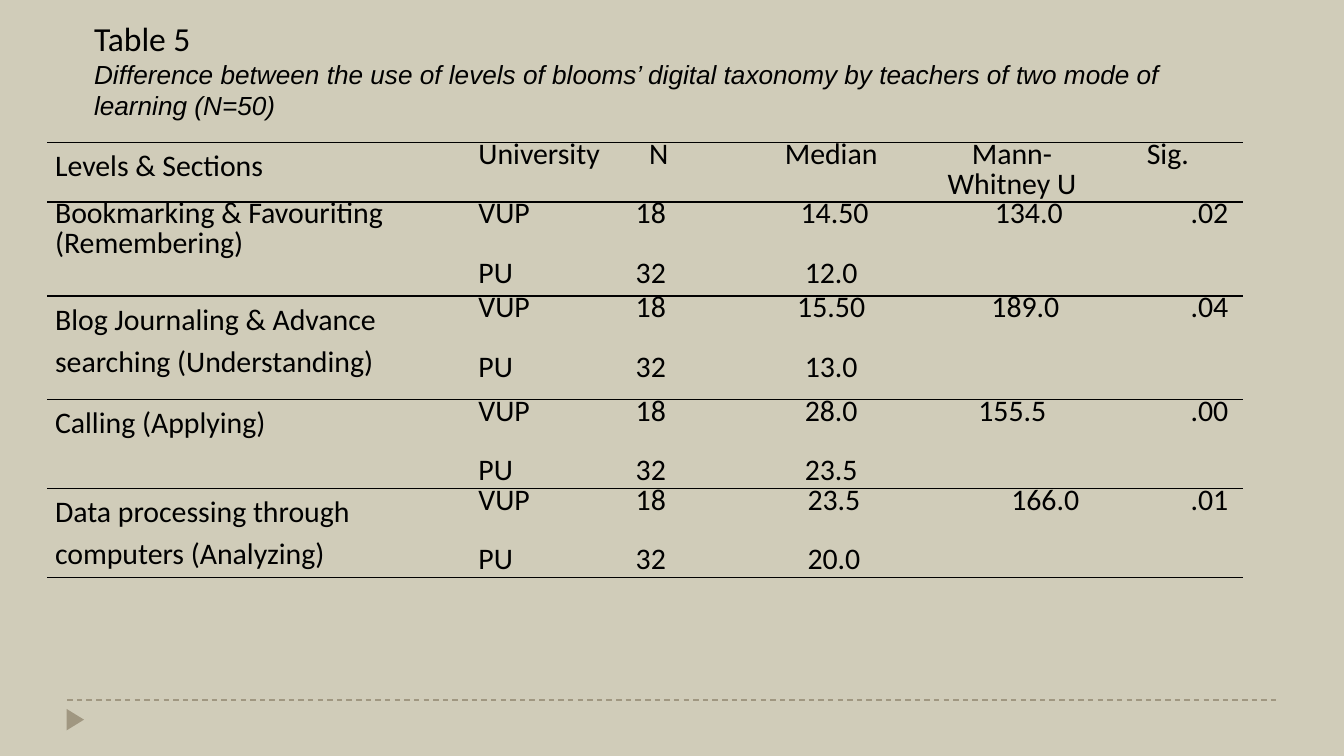
from lxml.etree import SubElement
from pptx import Presentation
from pptx.dml.color import RGBColor
from pptx.enum.dml import MSO_LINE
from pptx.enum.shapes import MSO_CONNECTOR, MSO_SHAPE
from pptx.enum.text import MSO_ANCHOR, PP_ALIGN
from pptx.oxml import parse_xml
from pptx.oxml.ns import nsdecls, qn
from pptx.util import Inches, Pt

COLORS = {"background": "D0CCB9", "accent": "A09781", "ink": "000000"}
LEFT, CENTER, RIGHT = PP_ALIGN.LEFT, PP_ALIGN.CENTER, PP_ALIGN.RIGHT


def rgb(name):
    return RGBColor.from_string(COLORS[name])


def write(paragraph, text, font="Calibri", size=16, italic=False,
          align=LEFT, spacing=None, indent=0, right_indent=0):
    """Fill one paragraph; indents are in inches."""
    paragraph.alignment = align
    if spacing:
        paragraph.line_spacing = spacing
    properties = paragraph._p.get_or_add_pPr()
    properties.set("marL", str(Inches(indent)))
    properties.set("marR", str(Inches(right_indent)))
    properties.set("indent", "0")
    if text:
        run = paragraph.add_run()
        run.text = text
        run.font.name, run.font.size = font, Pt(size)
        run.font.italic = italic
        run.font.color.rgb = rgb("ink")
    else:
        # An empty cell must not grow its row
        SubElement(paragraph._p, qn("a:endParaRPr"), sz=str(size * 100 // 2))


class SlideBuilder:
    def __init__(self, deck):
        self.slide = deck.slides.add_slide(deck.slide_layouts[5])
        background = self.slide.background.fill
        background.solid()
        background.fore_color.rgb = rgb("background")

    def title(self, left, top, width, height, lines):
        title = self.slide.shapes.title
        title.left, title.top = Inches(left), Inches(top)
        title.width, title.height = Inches(width), Inches(height)
        frame = title.text_frame
        frame.word_wrap = True
        frame.vertical_anchor = MSO_ANCHOR.MIDDLE
        for i, (text, style) in enumerate(lines):
            paragraph = frame.add_paragraph() if i else frame.paragraphs[0]
            write(paragraph, text, **style)

    def dashed_line(self, left, right, y):
        line = self.slide.shapes.add_connector(
            MSO_CONNECTOR.STRAIGHT, Inches(left), Inches(y), Inches(right), Inches(y))
        line.line.color.rgb = rgb("accent")
        line.line.width = Pt(0.75)
        line.line.dash_style = MSO_LINE.DASH
        SubElement(line._element.spPr, qn("a:effectLst"))

    def triangle(self, left, top, width, height):
        marker = self.slide.shapes.add_shape(
            MSO_SHAPE.ISOSCELES_TRIANGLE,
            Inches(left), Inches(top), Inches(width), Inches(height))
        marker.rotation = 90
        marker.shadow.inherit = False
        marker.fill.solid()
        marker.fill.fore_color.rgb = rgb("accent")
        marker.line.fill.background()

    def table(self, left, top, widths, heights):
        table = self.slide.shapes.add_table(
            len(heights), len(widths), Inches(left), Inches(top),
            Inches(sum(widths)), Inches(sum(heights))).table
        table.first_row = table.horz_banding = False
        for column, width in zip(table.columns, widths):
            column.width = Inches(width)
        for row, height in zip(table.rows, heights):
            row.height = Inches(height)
        return table

    def cell(self, cell, lines, rules="", **style):
        """Write the lines in a cell; rules names its ruled sides, T and B."""
        cell.margin_left = cell.margin_right = Inches(0.06)
        cell.margin_top = cell.margin_bottom = 0
        cell.fill.background()
        style = {"spacing": Pt(16), "right_indent": 0.05, **style}
        for i, text in enumerate(lines.split("\n")):
            paragraph = cell.text_frame.add_paragraph() if i else cell.text_frame.paragraphs[0]
            write(paragraph, text, **style)
        for i, side in enumerate("LRTB"):
            stroke = (f'<a:solidFill><a:srgbClr val="{COLORS["ink"]}"/></a:solidFill>'
                      if side in rules else "<a:noFill/>")
            cell._tc.tcPr.insert(i, parse_xml(
                f'<a:ln{side} {nsdecls("a")} w="{Pt(1)}">{stroke}</a:ln{side}>'))


# Heading cells: text, alignment, indent
HEADINGS = [("University", LEFT, 0), ("N", LEFT, 0.19), ("Median", CENTER, 0),
            ("Mann-Whitney U", CENTER, 0.04), ("Sig.", CENTER, 0.04)]

# Level, its line spacing, medians of VUP and PU (with indent), U (with format), significance
LEVELS = [
    ("Bookmarking & Favouriting\n(Remembering)", Pt(16),
     [("14.50", 0.05), ("12.0", 0)], ("134.0", CENTER, 0.29), ".02"),
    ("Blog Journaling & Advance searching (Understanding)", 1.15,
     [("15.50", 0), ("13.0", 0)], ("189.0", CENTER, 0.24), ".04"),
    ("Calling (Applying)", 1.15,
     [("28.0", 0), ("23.5", 0)], ("155.5", LEFT, 0.29), ".00"),
    ("Data processing through computers (Analyzing)", 1.15,
     [("23.5", 0.04), ("20.0", 0.04)], ("166.0", RIGHT, 0), ".01"),
]
GROUPS = [("VUP", "18"), ("PU", "32")]


def main():
    deck = Presentation()
    deck.slide_width = Inches(10)
    deck.slide_height = deck.slide_width * 9 // 16
    page = SlideBuilder(deck)

    # Footer decoration
    page.dashed_line(0.5, 9.5, 5.21)
    page.triangle(0.48, 5.29, 0.16, 0.13)

    # Results table: heading row
    results = page.table(0.35, 1.06, [3.15, 1.08, 0.91, 1.44, 1.21, 1.11],
                         [0.44, 0.44, 0.26, 0.44, 0.33, 0.44, 0.22, 0.44, 0.22])
    page.cell(results.cell(0, 0), "Levels & Sections", "TB", spacing=1.15)
    for column, (text, align, indent) in enumerate(HEADINGS, 1):
        page.cell(results.cell(0, column), text, "TB", align=align, indent=indent)

    # Two rows per level, one for each university
    for index, (level, spacing, medians, u_value, significance) in enumerate(LEVELS):
        top = 1 + 2 * index
        results.cell(top, 0).merge(results.cell(top + 1, 0))
        page.cell(results.cell(top, 0), level, "TB", spacing=spacing)
        page.cell(results.cell(top + 1, 0), "", "B")
        for offset, ((university, count), (median, shift)) in enumerate(zip(GROUPS, medians)):
            values = [(university, LEFT, 0), (count, LEFT, 0.09), (median, CENTER, shift)]
            values += [("", LEFT, 0)] * 2 if offset else [u_value, (significance, RIGHT, 0)]
            for column, (text, align, indent) in enumerate(values, 1):
                page.cell(results.cell(top + offset, column), text,
                          "B" if offset else "T", align=align, indent=indent)

    # Title
    page.title(0.6, 0.1, 8.83, 0.83, [
        ("Table 5", {"size": 18}),
        ("Difference between the use of levels of blooms’ digital taxonomy by teachers "
         "of two mode of learning (N=50)", {"font": "Arial", "size": 14, "italic": True}),
    ])

    deck.save("out.pptx")


if __name__ == "__main__":
    main()
